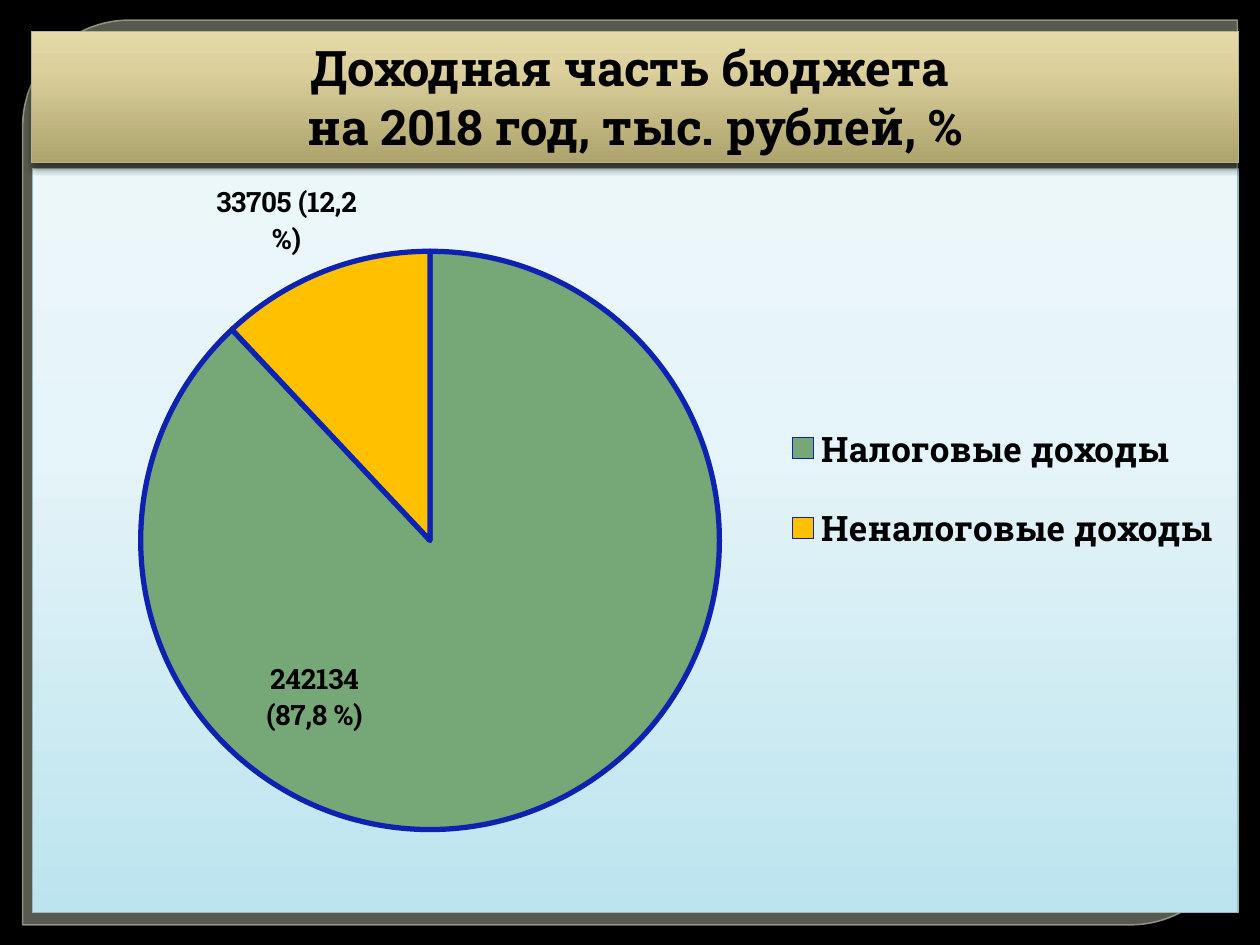
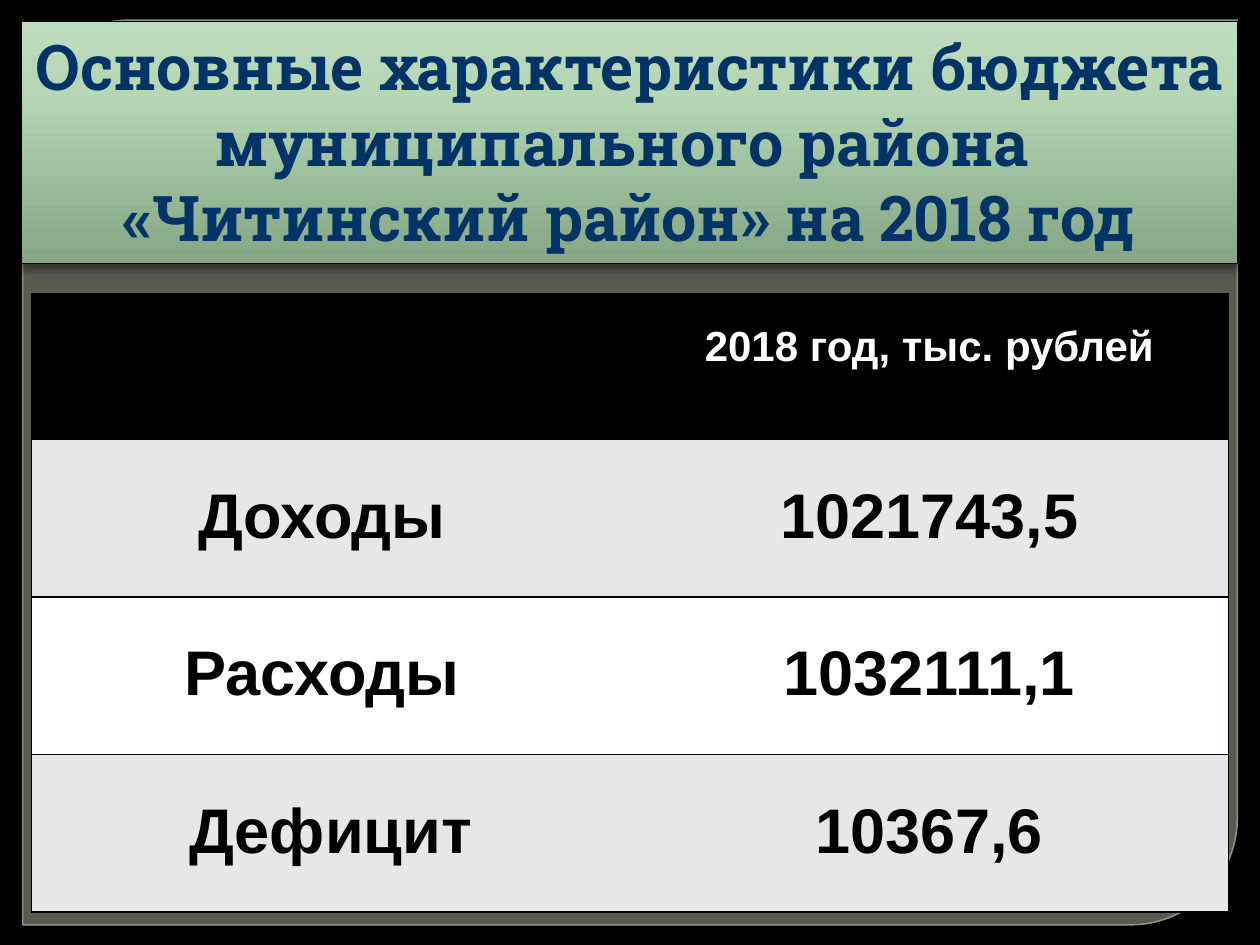
from dataclasses import dataclass
from lxml import etree
from pptx import Presentation
from pptx.chart.data import CategoryChartData
from pptx.dml.color import RGBColor
from pptx.enum.chart import XL_CHART_TYPE as ChartType
from pptx.enum.chart import XL_LABEL_POSITION as LabelPos
from pptx.enum.chart import XL_LEGEND_POSITION as LegendPos
from pptx.enum.shapes import MSO_SHAPE as Shape
from pptx.enum.text import MSO_ANCHOR as Anchor
from pptx.enum.text import PP_ALIGN as Align
from pptx.oxml import parse_xml
from pptx.oxml.ns import qn
from pptx.util import Inches, Pt

# Content
INCOME_TITLE = ["Доходная часть бюджета ", "на 2018 год, тыс. рублей, %"]
INCOME = [  # category, share, label lines, label position, label shift
    ("Налоговые доходы", 88, ("242134", "(87,8 %)"), LabelPos.CENTER, (-0.14, 0.03)),
    ("Неналоговые доходы", 12, ("33705 (12,2", "%)"), LabelPos.OUTSIDE_END, (0.03, -0.01)),
]
BUDGET_TITLE = ["Основные характеристики бюджета ", "муниципального района ",
                "«Читинский район» на 2018 год"]
BUDGET = [
    ("", "2018 год, тыс. рублей"),
    ("Доходы ", "1021743,5"),
    ("Расходы ", "1032111,1"),
    ("Дефицит", "10367,6"),
]


@dataclass(frozen=True)
class Theme:
    black: str = "000000"
    white: str = "FFFFFF"
    navy: str = "003366"
    frame: str = "888B7B"
    frame_line: str = "9DA090"
    row_tint: str = "E7E7E7"
    slices: tuple = ("76A776", "FFC000")
    slice_line: str = "0E22B2"
    chart_line: str = "98BAC3"
    gold_line: str = "BBB389"
    gold: tuple = ((0, "ADA36C"), (72, "DCD19D"), (100, "E4D9A8"))
    green: tuple = ((0, "85A785"), (72, "B6D6B6"), (100, "BEDDBE"))
    sky: tuple = ((0, "BCE4EF"), (62, "E5F4F8"), (100, "ECF7FA"))
    slab: str = "Roboto Slab"
    sans: str = "Arial"
    title: int = 28
    big: int = 36
    header: int = 24
    legend: int = 20
    label: int = 16


THEME = Theme()
NS = ('xmlns:a="http://schemas.openxmlformats.org/drawingml/2006/main" '
      'xmlns:c="http://schemas.openxmlformats.org/drawingml/2006/chart"')


def rgb(code):
    return RGBColor.from_string(code)


def style(font, face, size, color, bold=True):
    font.name, font.size, font.bold = face, Pt(size), bold
    font.color.rgb = rgb(color)


def set_alpha(fill_owner, percent):
    for color in fill_owner.iter(qn("a:srgbClr")):
        etree.SubElement(color, qn("a:alpha")).set("val", str(percent * 1000))


def gradient_xml(stops):
    marks = "".join(f'<a:gs pos="{at * 1000}"><a:srgbClr val="{color}"/></a:gs>'
                    for at, color in stops)
    return (f'<a:gradFill {NS} rotWithShape="1"><a:gsLst>{marks}</a:gsLst>'
            '<a:lin ang="16200000" scaled="0"/></a:gradFill>')


def line_xml(tag, color, width):
    paint = (f'<a:solidFill><a:srgbClr val="{color}"/></a:solidFill>' if color
             else "<a:noFill/>")
    return f'<a:{tag} {NS} w="{Pt(width)}">{paint}</a:{tag}>'


def layout_xml(inner=False, **places):
    target = '<c:layoutTarget val="inner"/>' if inner else ""
    modes = "".join(f'<c:{axis}Mode val="edge"/>' for axis in "xy") if "w" in places else ""
    values = "".join(f'<c:{key} val="{value}"/>' for key, value in places.items())
    return parse_xml(f"<c:layout {NS}><c:manualLayout>{target}{modes}{values}"
                     "</c:manualLayout></c:layout>")


def drop_layout(owner):
    for old in owner.findall(qn("c:layout")):
        owner.remove(old)


def new_slide(deck):
    """Black slide with the rounded frame that both slides share."""
    slide = deck.slides.add_slide(deck.slide_layouts[6])
    slide.background.fill.solid()
    slide.background.fill.fore_color.rgb = rgb(THEME.black)
    frame = slide.shapes.add_shape(Shape.ROUND_2_DIAG_RECTANGLE, Inches(0.18), Inches(0.16),
                                   Inches(9.64), Inches(7.18))
    frame.adjustments[0], frame.adjustments[1] = 0.118, 0
    frame.shadow.inherit = False
    frame.fill.solid()
    frame.fill.fore_color.rgb = rgb(THEME.frame)
    set_alpha(frame.fill._xPr.find(qn("a:solidFill")), 65)
    frame.line.color.rgb = rgb(THEME.frame_line)
    frame.line.width = Pt(0.87)
    set_alpha(frame.line._ln, 88)
    return slide


def add_title_band(slide, lines, box, stops, edge, size, color):
    band = slide.shapes.add_shape(Shape.RECTANGLE, *map(Inches, box))
    band.line.color.rgb = rgb(edge)
    band.line.width = Pt(0.75)
    props = band._element.spPr
    props.find(qn("a:prstGeom")).addnext(parse_xml(gradient_xml(stops)))
    props.append(parse_xml(
        f'<a:effectLst {NS}><a:outerShdw blurRad="{Pt(4)}" dist="{Pt(3)}" dir="5400000" '
        f'rotWithShape="0"><a:srgbClr val="{THEME.black}"><a:alpha val="43000"/></a:srgbClr>'
        "</a:outerShdw></a:effectLst>"))
    text = band.text_frame
    text.word_wrap = True
    text.vertical_anchor = Anchor.TOP
    for number, line in enumerate(lines):
        paragraph = text.add_paragraph() if number else text.paragraphs[0]
        paragraph.text = line
        paragraph.alignment = Align.CENTER
        style(paragraph.font, THEME.slab, size, color)


def add_income_pie(slide):
    shares = CategoryChartData()
    shares.categories = [row[0] for row in INCOME]
    shares.add_series("Series 1", [row[1] for row in INCOME])
    pie = slide.shapes.add_chart(ChartType.PIE, Inches(0.25), Inches(1.33), Inches(9.58),
                                 Inches(5.92), shares).chart
    pie.has_title = False
    style(pie.font, THEME.slab, 10, THEME.black, bold=False)
    space = pie._chartSpace
    space.find(qn("c:chart")).addnext(parse_xml(
        f"<c:spPr {NS}>{gradient_xml(THEME.sky)}"
        f"{line_xml('ln', THEME.chart_line, 0.75)}</c:spPr>"))
    plot_area = space.find(".//" + qn("c:plotArea"))
    drop_layout(plot_area)
    plot_area.insert(0, layout_xml(True, x=0.09, y=0.11, w=0.48, h=0.78))

    # Legend
    pie.has_legend = True
    legend = pie.legend
    legend.position = LegendPos.RIGHT
    legend.include_in_layout = False
    style(legend.font, THEME.slab, THEME.legend, THEME.black)
    drop_layout(legend._element)
    legend._element.find(qn("c:legendPos")).addnext(
        layout_xml(x=0.62, y=0.3, w=0.37, h=0.26))

    # Slices and their labels
    plot = pie.plots[0]
    plot.vary_by_categories = True
    income = plot.series[0]
    for number, (_, _, lines, position, (shift_x, shift_y)) in enumerate(INCOME):
        piece = income.points[number]
        piece.format.fill.solid()
        piece.format.fill.fore_color.rgb = rgb(THEME.slices[number])
        piece.format.line.color.rgb = rgb(THEME.slice_line)
        piece.format.line.width = Pt(3)
        label = piece.data_label
        label.text_frame.text = "\n".join(lines)
        for paragraph in label.text_frame.paragraphs:
            for run in paragraph.runs:
                style(run.font, THEME.slab, THEME.label, THEME.black)
        label.position = position
        entry = label._dLbl
        drop_layout(entry)
        entry.find(qn("c:idx")).addnext(layout_xml(x=shift_x, y=shift_y))
    for leader in space.iter(qn("c:showLeaderLines")):
        leader.set("val", "0")


def add_budget_table(slide):
    table = slide.shapes.add_table(len(BUDGET), 2, Inches(0.25), Inches(2.33), Inches(9.5),
                                   Inches(4.92)).table
    table.first_row = table.horz_banding = False
    for r, values in enumerate(BUDGET):
        table.rows[r].height = Inches(1.25 if r else 1.16)
        if r == 0:
            fill, color, size = THEME.black, THEME.white, THEME.header
        else:
            fill = THEME.row_tint if r % 2 else THEME.white
            color, size = THEME.black, THEME.big
        for c, value in enumerate(values):
            cell = table.cell(r, c)
            cell.fill.solid()
            cell.fill.fore_color.rgb = rgb(fill)
            inner_side = "lnL" if c else "lnR"
            for place, side in enumerate(("lnL", "lnR", "lnT", "lnB")):
                edge = None if side == inner_side else THEME.black
                cell._tc.tcPr.insert(place, parse_xml(line_xml(side, edge, 1)))
            paragraph = cell.text_frame.paragraphs[0]
            paragraph.text = value
            paragraph.alignment = Align.CENTER
            paragraph.line_spacing = 1.5
            style(paragraph.font, THEME.sans, size, color)


def main():
    deck = Presentation()
    deck.slide_width, deck.slide_height = Inches(10), Inches(7.5)

    # Income shares
    income = new_slide(deck)
    add_income_pie(income)
    add_title_band(income, INCOME_TITLE, (0.25, 0.25, 9.58, 1.04), THEME.gold,
                   THEME.gold_line, THEME.title, THEME.black)

    # Budget totals
    budget = new_slide(deck)
    add_title_band(budget, BUDGET_TITLE, (0.17, 0.17, 9.65, 1.92), THEME.green,
                   THEME.black, THEME.big, THEME.navy)
    add_budget_table(budget)
    deck.save("out.pptx")


if __name__ == "__main__":
    main()
